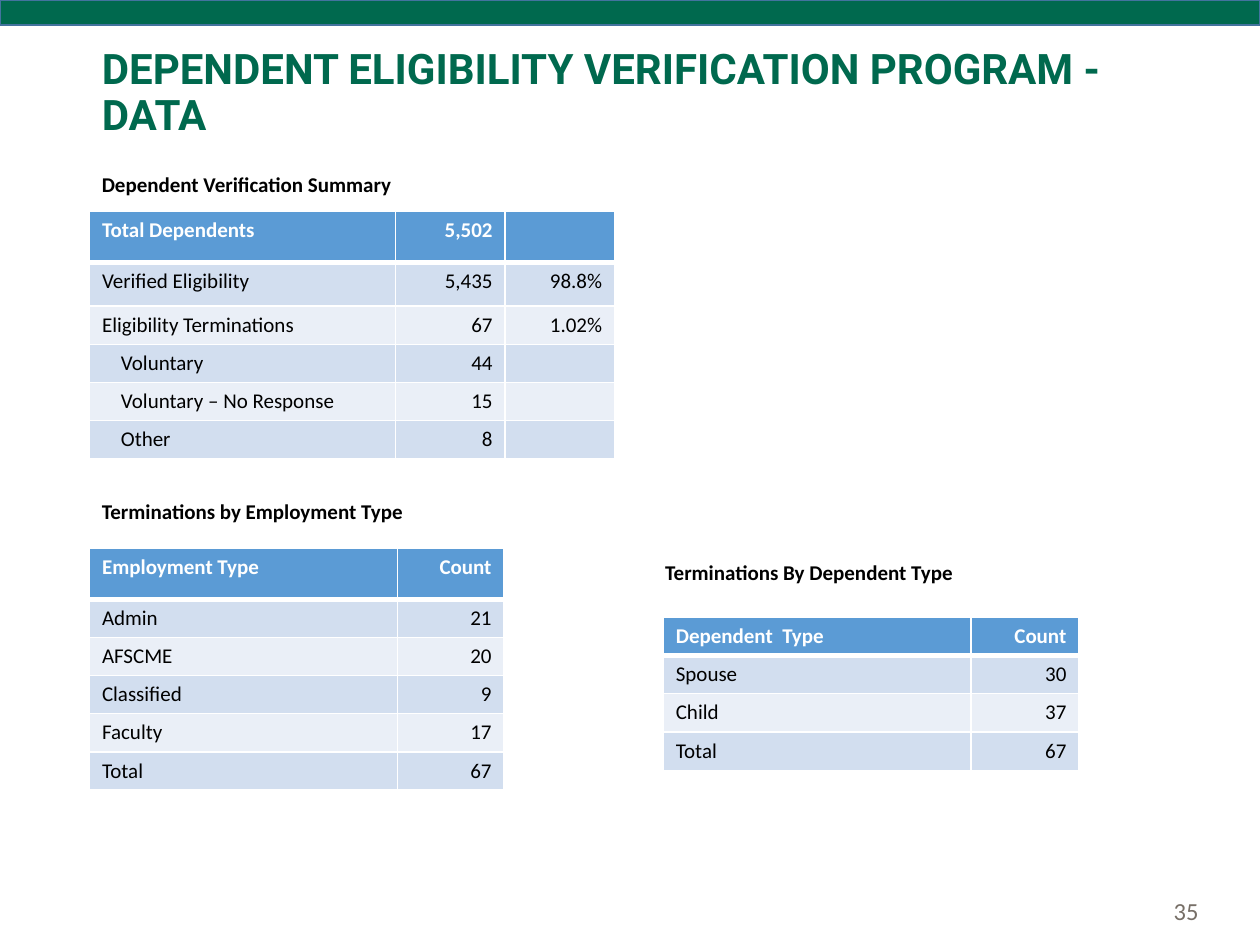
from lxml.etree import SubElement
from pptx import Presentation
from pptx.dml.color import RGBColor
from pptx.enum.shapes import MSO_SHAPE
from pptx.enum.text import MSO_ANCHOR, PP_ALIGN
from pptx.oxml.ns import qn
from pptx.util import Pt

COLORS = {"green": "00694E", "bar_line": "43739E", "header": "5B9BD5",
          "odd": "D2DEEF", "even": "EAEFF7", "white": "FFFFFF",
          "black": "000000", "gray": "776F67"}
ROW = 21.8
INDENT = 10.8
LEFT = 51.1
TITLE = "DEPENDENT ELIGIBILITY VERIFICATION PROGRAM - DATA"
PAGE = "35"

# Row labels listed in "indented" are sub-items of the row above them.
SECTIONS = [
    {"heading": "Dependent Verification Summary", "heading_at": (LEFT, 94.3),
     "at": (LEFT, 120.7), "widths": [175, 62.6, 62.6],
     "heights": [29.2, 24.9, 22] + [ROW] * 3,
     "indented": ["Voluntary", "Voluntary – No Response", "Other"],
     "rows": [("Total Dependents", "5,502", ""),
              ("Verified Eligibility", "5,435", "98.8%"),
              ("Eligibility Terminations", "67", "1.02%"),
              ("Voluntary", "44", ""),
              ("Voluntary – No Response", "15", ""),
              ("Other", "8", "")]},
    {"heading": "Terminations by Employment Type", "heading_at": (LEFT, 281.5),
     "at": (LEFT, 313.2), "widths": [176, 61],
     "heights": [29.2] + [ROW] * 5, "indented": [],
     "rows": [("Employment Type", "Count"), ("Admin", "21"), ("AFSCME", "20"),
              ("Classified", "9"), ("Faculty", "17"), ("Total", "67")]},
    {"heading": "Terminations By Dependent Type", "heading_at": (373, 316.4),
     "at": (379, 352.8), "widths": [176, 61.6],
     "heights": [ROW] * 3 + [22.3], "indented": [],
     "rows": [("Dependent  Type", "Count"), ("Spouse", "30"), ("Child", "37"),
              ("Total", "67")]},
]


def rgb(name):
    return RGBColor.from_string(COLORS[name])


def style(p, size, color, bold=False, font="Calibri"):
    for r in p.runs:
        r.font.size, r.font.bold, r.font.name = Pt(size), bold, font
        r.font.color.rgb = rgb(color)


def add_text(s, text, box, size, color, bold=False, font="Calibri",
             wrap=True, anchor=MSO_ANCHOR.MIDDLE):
    tf = s.shapes.add_textbox(*map(Pt, box)).text_frame
    tf.word_wrap, tf.vertical_anchor = wrap, anchor
    p = tf.paragraphs[0]
    p.text = text
    style(p, size, color, bold, font)
    return p


def set_borders(cell, top, bottom):
    tcPr = cell._tc.get_or_add_tcPr()
    for side, width in (("L", 1), ("R", 1), ("T", top), ("B", bottom)):
        ln = SubElement(tcPr, qn("a:ln" + side), w=str(Pt(width)))
        fill = SubElement(ln, qn("a:solidFill"))
        SubElement(fill, qn("a:srgbClr"), val=COLORS["white"])


def fill_cell(cell, text, row, col, indented):
    header = row == 0
    set_borders(cell, 3 if row == 1 else 1, 3 if header else 1)
    cell.fill.solid()
    cell.fill.fore_color.rgb = rgb("header" if header else "odd" if row % 2 else "even")
    p = cell.text_frame.paragraphs[0]
    if text:
        p.text = text
        style(p, 12, "white" if header else "black", header)
    else:  # keeps an empty cell from growing the row
        SubElement(p._p, qn("a:endParaRPr"), sz="1200")
    if col:
        p.alignment = PP_ALIGN.RIGHT
    elif indented:
        cell.margin_left = Pt(7.2 + INDENT)


def add_section(s, section):
    add_text(s, section["heading"], (*section["heading_at"], 188, 21.6), 12,
             "black", bold=True, wrap=False, anchor=MSO_ANCHOR.TOP)
    rows, widths, heights = section["rows"], section["widths"], section["heights"]
    table = s.shapes.add_table(len(rows), len(widths), *map(Pt, section["at"]),
                               Pt(sum(widths)), Pt(sum(heights))).table
    for column, width in zip(table.columns, widths):
        column.width = Pt(width)
    for i, (values, height) in enumerate(zip(rows, heights)):
        table.rows[i].height = Pt(height)
        for j, text in enumerate(values):
            fill_cell(table.cell(i, j), text, i, j, values[0] in section["indented"])


def main():
    prs = Presentation()
    prs.slide_width, prs.slide_height = Pt(720), Pt(540)
    s = prs.slides.add_slide(prs.slide_layouts[6])

    bar = s.shapes.add_shape(MSO_SHAPE.RECTANGLE, 0, 0, Pt(720), Pt(14.4))
    bar.shadow.inherit = False
    bar.fill.solid()
    bar.fill.fore_color.rgb = rgb("green")
    bar.line.color.rgb = rgb("bar_line")
    bar.line.width = Pt(1)

    title = add_text(s, TITLE, (LEFT, 1.4, 620.6, 104.4), 24, "green", True, "Roboto")
    title.line_spacing = 0.9
    for section in SECTIONS:
        add_section(s, section)
    add_text(s, PAGE, (476, 506.2, 216, 28.8), 14, "gray").alignment = PP_ALIGN.RIGHT
    prs.save("out.pptx")


if __name__ == "__main__":
    main()
